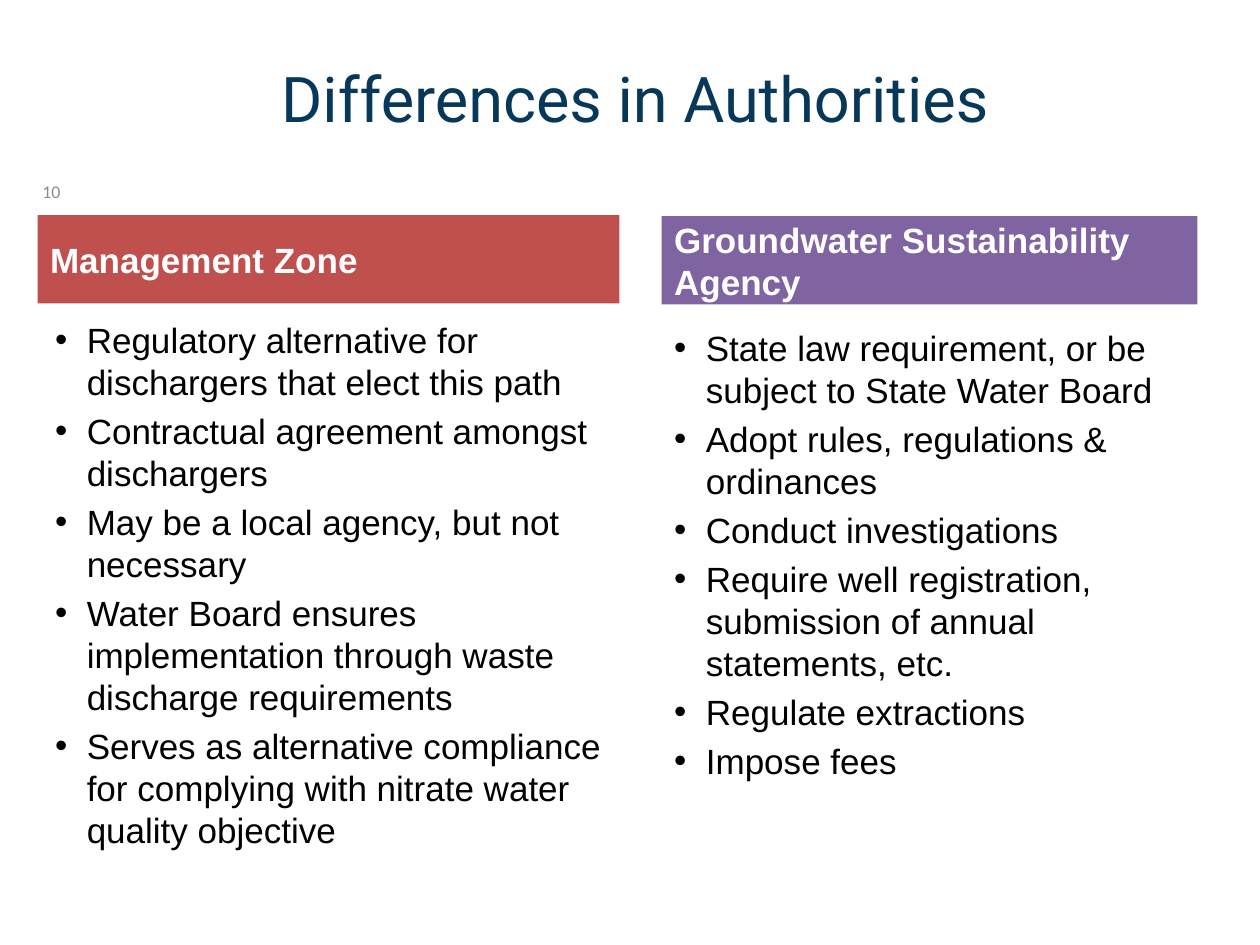
from lxml import etree
from pptx import Presentation
from pptx import util as u
from pptx.dml.color import RGBColor
from pptx.enum import shapes, text
from pptx.oxml.ns import qn

NAVY = RGBColor(0x07, 0x38, 0x59)
RED = RGBColor(0xC0, 0x50, 0x4D)
PURPLE = RGBColor(0x80, 0x64, 0xA2)
GRAY = RGBColor(0x8C, 0x8C, 0x8C)
BLACK = RGBColor(0, 0, 0)
WHITE = RGBColor(0xFF, 0xFF, 0xFF)
LEFT, CENTER, RIGHT = text.PP_ALIGN.LEFT, text.PP_ALIGN.CENTER, text.PP_ALIGN.RIGHT
TOP, MIDDLE = text.MSO_ANCHOR.TOP, text.MSO_ANCHOR.MIDDLE


def write(box, lines, color, anchor=MIDDLE, align=LEFT, before=0, **font):
    frame = box.text_frame
    frame.word_wrap = True
    frame.vertical_anchor = anchor
    frame.text = "\n".join(lines)
    for para in frame.paragraphs:
        para.alignment = align
        para.space_before = u.Pt(before)
        span = para.runs[0]
        span.font.color.rgb = color
        for name, value in font.items():
            setattr(span.font, name, value)


deck = Presentation()
deck.slide_width, deck.slide_height = u.Cm(25.4), u.Cm(19.05)
page = deck.slides.add_slide(deck.slide_layouts[6])

title = page.shapes.add_textbox(u.Cm(1.47), u.Cm(0.76), u.Cm(22.66), u.Cm(2.41))
write(title, ["Differences in Authorities"], NAVY, align=CENTER, name="Roboto", size=u.Pt(36))

body_font = {"name": "Arial", "size": u.Pt(20), "before": 4}
columns = [
    {
        "heading": "Management Zone",
        "fill": RED,
        "heading_at": (0.76, 4.34, 11.73, 1.78),
        "list_at": (0.86, 6.3, 11.96, 10.72),
        "points": [
            "Regulatory alternative for dischargers that elect this path",
            "Contractual agreement amongst dischargers",
            "May be a local agency, but not necessary",
            "Water Board ensures implementation through waste discharge requirements",
            "Serves as alternative compliance for complying with nitrate water quality objective",
        ],
    },
    {
        "heading": "Groundwater Sustainability Agency",
        "fill": PURPLE,
        "heading_at": (13.34, 4.36, 10.8, 1.78),
        "list_at": (13.34, 6.45, 11.28, 9.96),
        "points": [
            "State law requirement, or be subject to State Water Board",
            "Adopt rules, regulations & ordinances",
            "Conduct investigations",
            "Require well registration, submission of annual statements, etc.",
            "Regulate extractions",
            "Impose fees",
        ],
    },
]

for column in columns:
    points = page.shapes.add_textbox(*map(u.Cm, column["list_at"]))
    write(points, column["points"], BLACK, anchor=TOP, **body_font)
    for para in points.text_frame.paragraphs:
        props = para._p.get_or_add_pPr()
        props.set("marL", str(u.Cm(0.64)))
        props.set("indent", str(u.Cm(-0.64)))
        etree.SubElement(props, qn("a:buFont")).set("typeface", "Arial")
        etree.SubElement(props, qn("a:buChar")).set("char", "•")

    heading = page.shapes.add_shape(
        shapes.MSO_SHAPE.RECTANGLE, *map(u.Cm, column["heading_at"])
    )
    heading.shadow.inherit = False
    heading.fill.solid()
    heading.fill.fore_color.rgb = column["fill"]
    heading.line.fill.background()
    write(heading, [column["heading"]], WHITE, bold=True, **body_font)

number = page.shapes.add_textbox(u.Cm(0), u.Cm(3.56), u.Cm(1.47), u.Cm(0.61))
write(number, ["10"], GRAY, align=RIGHT, name="Calibri", size=u.Pt(10.2))

deck.save("out.pptx")
